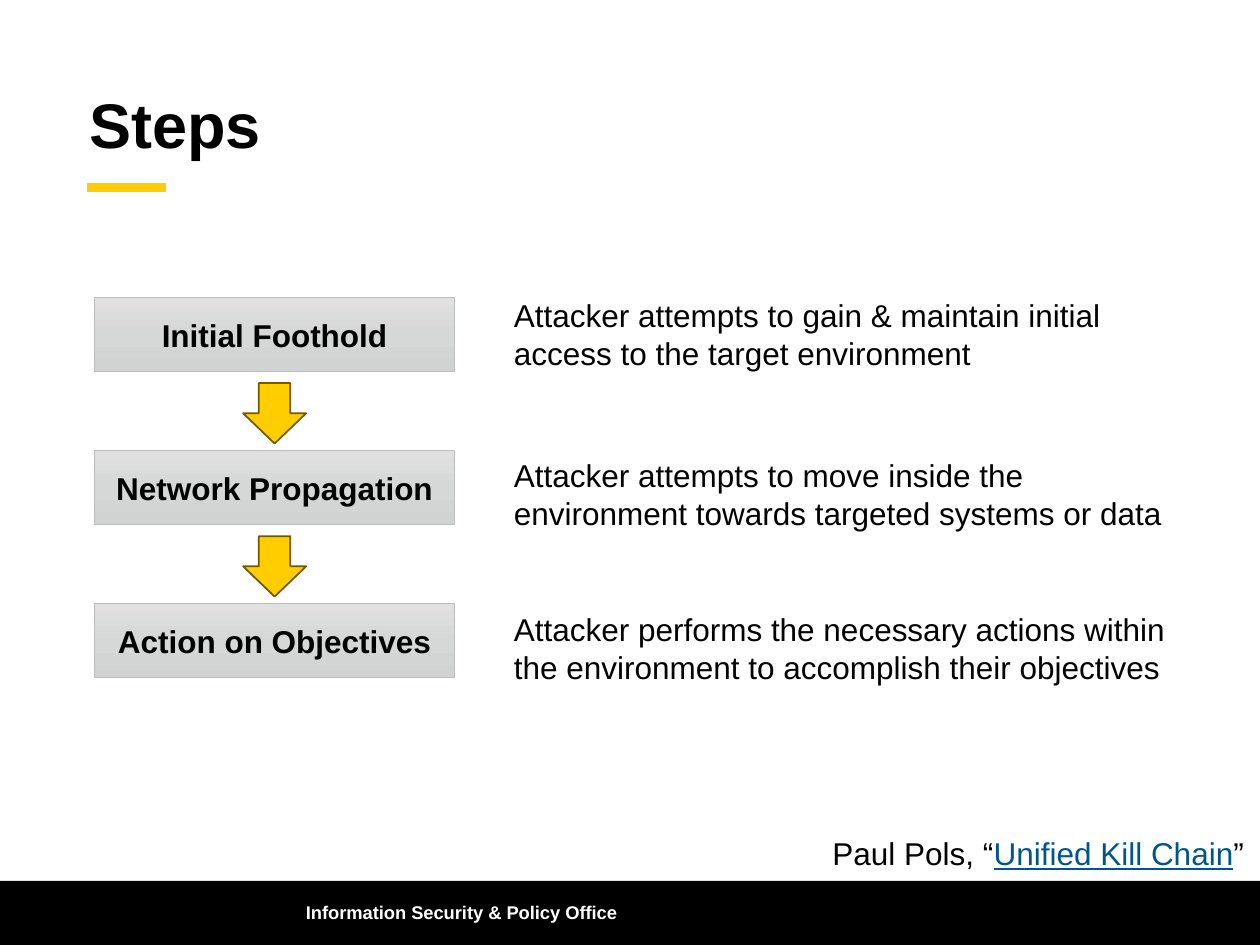
from copy import deepcopy

from lxml import etree
from pptx import Presentation
from pptx.dml.color import RGBColor
from pptx.enum.shapes import MSO_CONNECTOR, MSO_SHAPE
from pptx.enum.text import MSO_ANCHOR, MSO_AUTO_SIZE, PP_ALIGN
from pptx.oxml.ns import qn
from pptx.util import Inches, Pt

RECTANGLE = MSO_SHAPE.RECTANGLE
DOWN_ARROW = MSO_SHAPE.DOWN_ARROW
STRAIGHT = MSO_CONNECTOR.STRAIGHT
MIDDLE = MSO_ANCHOR.MIDDLE
FIT_SHAPE = MSO_AUTO_SIZE.SHAPE_TO_FIT_TEXT
LEFT, CENTER, RIGHT = PP_ALIGN.LEFT, PP_ALIGN.CENTER, PP_ALIGN.RIGHT

BLACK, WHITE, GOLD = "000000", "FFFFFF", "FFCD00"
BOX_GRADIENT = ("E0E0E0", "D6D7D7", "D1D2D2")
STEP_TOP, STEP_PITCH = 2.36, 1.215
STEPS = [
    ("Initial Foothold", 2.3,
     "Attacker attempts to gain & maintain initial access to the target environment"),
    ("Network Propagation", 3.57,
     "Attacker attempts to move inside the environment towards targeted systems or data"),
    ("Action on Objectives", 4.79,
     "Attacker performs the necessary actions within the environment "
     "to accomplish their objectives"),
]


def rgb(value):
    return RGBColor.from_string(value)


def style(paragraph, size, color=BLACK, bold=False, align=LEFT):
    paragraph.alignment = align
    font = paragraph.font
    font.name, font.size, font.bold = "Arial", Pt(size), bold
    font.color.rgb = rgb(color)


def add_block(slide, kind, box, fill=None, line=None, width=1):
    block = slide.shapes.add_shape(kind, *map(Inches, box))
    block.shadow.inherit = False
    if fill:
        block.fill.solid()
        block.fill.fore_color.rgb = rgb(fill)
    if line:
        block.line.color.rgb = rgb(line)
        block.line.width = Pt(width)
    else:
        block.line.fill.background()
    return block


def add_text(slide, box, text, size=18, color=BLACK, bold=False, align=LEFT):
    frame = slide.shapes.add_textbox(*map(Inches, box)).text_frame
    frame.word_wrap = True
    paragraph = frame.paragraphs[0]
    paragraph.text = text
    style(paragraph, size, color, bold, align)
    return frame


def fill_gradient(block, colors):
    block.fill.gradient()
    block.fill.gradient_angle = 270
    stop_list = block._element.spPr.find(".//" + qn("a:gsLst"))
    stop_list.insert(1, deepcopy(stop_list[0]))
    for index, (stop, color) in enumerate(zip(block.fill.gradient_stops, colors)):
        stop.position = index / (len(colors) - 1)
        stop.color.rgb = rgb(color)


def add_step_box(slide, top, label):
    step = add_block(slide, RECTANGLE, (0.75, top, 2.86, 0.59), line="BBBCBC", width=0.5)
    fill_gradient(step, BOX_GRADIENT)
    step.text_frame.vertical_anchor = MIDDLE
    paragraph = step.text_frame.paragraphs[0]
    paragraph.text = label
    style(paragraph, 18, bold=True, align=CENTER)


def add_title(slide, text):
    title = slide.shapes.title
    title.left, title.top, title.width, title.height = map(Inches, (0.61, 0.54, 8.62, 0.95))
    title.text_frame.vertical_anchor = MIDDLE
    paragraph = title.text_frame.paragraphs[0]
    paragraph.text = text
    paragraph.line_spacing = 0.9
    style(paragraph, 36, bold=True)

    accent = slide.shapes.add_connector(STRAIGHT, *map(Inches, (0.69, 1.49, 1.32, 1.49)))
    accent.line.color.rgb = rgb(GOLD)
    accent.line.width = Pt(5)
    etree.SubElement(accent._element.spPr, qn("a:effectLst"))


def add_footer(slide, text):
    add_block(slide, RECTANGLE, (0, 6.99, 10, 0.51), BLACK)
    frame = add_text(slide, (2.33, 7.04, 6.86, 0.4), text, 10.5, WHITE, True)
    frame.vertical_anchor = MIDDLE


def add_citation(slide):
    frame = add_text(slide, (4.92, 6.57, 5.05, 0.4), "Paul Pols, “", align=RIGHT)
    frame.auto_size = FIT_SHAPE
    paragraph = frame.paragraphs[0]
    work = paragraph.add_run()
    work.text = "Unified Kill Chain"
    work.font.underline = True
    work.font.color.rgb = rgb("00558C")
    paragraph.add_run().text = "”"


def main():
    prs = Presentation()
    prs.slide_width, prs.slide_height = Inches(10), Inches(7.5)
    slide = prs.slides.add_slide(prs.slide_layouts[5])
    add_title(slide, "Steps")
    add_footer(slide, "Information Security & Policy Office")
    for index, (label, description_top, description) in enumerate(STEPS):
        top = STEP_TOP + index * STEP_PITCH
        add_step_box(slide, top, label)
        if index < len(STEPS) - 1:
            add_block(slide, DOWN_ARROW, (1.93, top + 0.68, 0.5, 0.48), GOLD, "705A00")
        frame = add_text(slide, (3.98, description_top, 5.49, 0.71), description)
        frame.auto_size = FIT_SHAPE
    add_citation(slide)
    prs.save("out.pptx")


if __name__ == "__main__":
    main()
